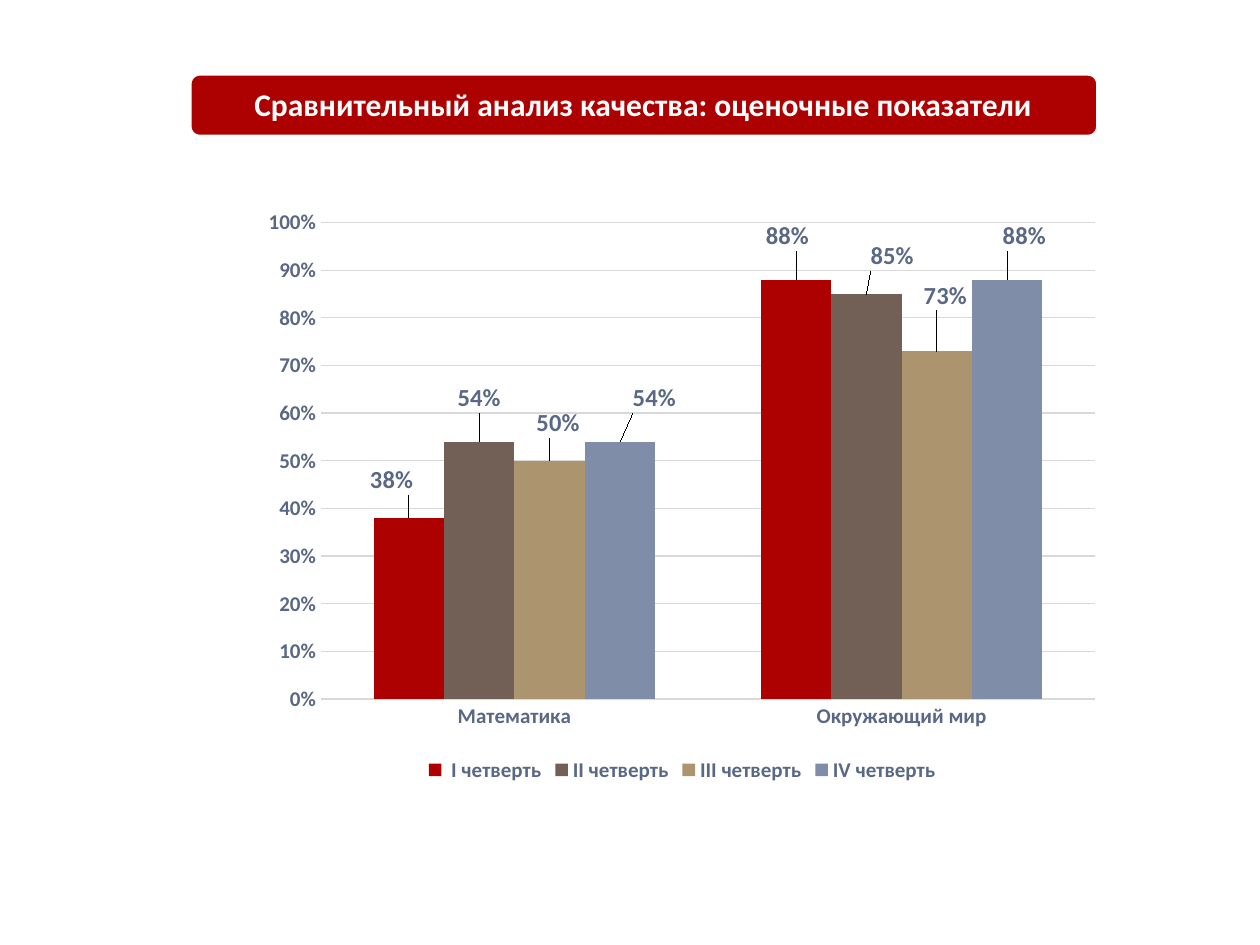
from dataclasses import dataclass

import lxml.etree
import pptx
import pptx.chart.data
import pptx.dml.color
import pptx.enum.chart
import pptx.enum.shapes
import pptx.enum.text
import pptx.oxml
import pptx.oxml.ns
import pptx.util
from pptx.util import Inches


@dataclass(frozen=True)
class Theme:
    font: str = "Calibri"
    white: str = "FFFFFF"
    red: str = "AD0101"
    text: str = "5A6885"
    grid: str = "D9D9D9"
    title_size: int = 18
    axis_size: int = 12
    label_size: int = 14


THEME = Theme()
SUBJECTS = ["Математика", "Окружающий мир"]
# Quarter, colour, values, label shifts as fractions of the chart
QUARTERS = [
    (" I четверть", THEME.red, (0.38, 0.88), ((-0.02, -0.03), (-0.01, -0.04))),
    ("II четверть", "726056", (0.54, 0.85), ((0, -0.04), (0.03, -0.03))),
    ("III четверть", "AC956E", (0.5, 0.73), ((0.01, -0.03), (0.01, -0.06))),
    ("IV четверть", "808DA9", (0.54, 0.88), ((0.04, -0.04), (0.02, -0.04))),
]


def rgb(value):
    return pptx.dml.color.RGBColor.from_string(value)


def style_font(font, size, color):
    font.name = THEME.font
    font.size = pptx.util.Pt(size)
    font.bold = True
    font.color.rgb = rgb(color)


def manual_layout(**values):
    """Make a chart layout element from its settings, in schema order."""
    layout = pptx.oxml.parse_xml(
        f"<c:layout {pptx.oxml.ns.nsdecls('c')}><c:manualLayout/></c:layout>")
    for name, value in values.items():
        tag = pptx.oxml.ns.qn(f"c:{name}")
        lxml.etree.SubElement(layout[0], tag).set("val", str(value))
    return layout


def add_title(page, text):
    title = page.shapes.title
    title.left, title.top = Inches(1.52), Inches(0.61)
    title.width, title.height = Inches(7.17), Inches(0.46)
    frame = title.text_frame
    frame.text = text
    frame.word_wrap = True
    frame.vertical_anchor = pptx.enum.text.MSO_ANCHOR.MIDDLE
    frame.margin_left = frame.margin_right = Inches(0.2)
    frame.margin_top = frame.margin_bottom = 0
    para = frame.paragraphs[0]
    para.alignment = pptx.enum.text.PP_ALIGN.CENTER
    para.line_spacing = 0.9
    style_font(para.runs[0].font, THEME.title_size, THEME.white)

    # Band behind the title
    band = page.shapes.add_shape(
        pptx.enum.shapes.MSO_SHAPE.ROUNDED_RECTANGLE,
        Inches(1.5), Inches(0.58), Inches(7.22), Inches(0.51))
    band.shadow.inherit = False
    band.fill.solid()
    band.fill.fore_color.rgb = rgb(THEME.red)
    band.line.color.rgb = rgb(THEME.white)
    band.line.width = pptx.util.Pt(3)
    title.element.addprevious(band.element)


def style_axis(axis):
    axis.major_tick_mark = axis.minor_tick_mark = pptx.enum.chart.XL_TICK_MARK.NONE
    axis.format.line.fill.background()
    style_font(axis.tick_labels.font, THEME.axis_size, THEME.text)


def style_series(series, color, shifts):
    series.format.fill.solid()
    series.format.fill.fore_color.rgb = rgb(color)
    labels = series.data_labels
    labels.show_value = True
    labels.number_format = "0%"
    labels.number_format_is_linked = False
    style_font(labels.font, THEME.label_size, THEME.text)
    for index, (shift_x, shift_y) in enumerate(shifts):
        label = series.points[index].data_label
        style_font(label.font, THEME.label_size, THEME.text)
        label.position = pptx.enum.chart.XL_LABEL_POSITION.OUTSIDE_END
        point_label = labels._element.findall(pptx.oxml.ns.qn("c:dLbl"))[index]
        point_label.insert(1, manual_layout(x=shift_x, y=shift_y))


def add_quality_chart(page):
    data = pptx.chart.data.CategoryChartData(number_format="0%")
    data.categories = SUBJECTS
    for name, _, values, _ in QUARTERS:
        data.add_series(name, values)
    chart = page.shapes.add_chart(
        pptx.enum.chart.XL_CHART_TYPE.COLUMN_CLUSTERED,
        Inches(2), Inches(1.58), Inches(6.83), Inches(4.67), data).chart
    chart.has_title = False
    chart.font.name = THEME.font
    chart.font.size = pptx.util.Pt(10)

    # Plot area and bars
    plot = chart.plots[0]
    plot.gap_width, plot.overlap = 150, 0
    plot.vary_by_categories = False
    for series, (_, color, _, shifts) in zip(plot.series, QUARTERS):
        style_series(series, color, shifts)
    area = chart._chartSpace.chart.plotArea
    for old in area.findall(pptx.oxml.ns.qn("c:layout")):
        area.remove(old)
    area.insert(0, manual_layout(layoutTarget="inner", xMode="edge", yMode="edge",
                                 x=0.08, y=0.04, w=0.9, h=0.81))

    # Axes
    style_axis(chart.category_axis)
    axis = chart.value_axis
    style_axis(axis)
    axis.minimum_scale, axis.maximum_scale, axis.major_unit = 0, 1, 0.1
    axis.tick_labels.number_format = "0%"
    axis.tick_labels.number_format_is_linked = False
    grid = axis.major_gridlines.format.line
    grid.color.rgb = rgb(THEME.grid)
    grid.width = pptx.util.Pt(0.75)

    # Legend
    chart.has_legend = True
    chart.legend.position = pptx.enum.chart.XL_LEGEND_POSITION.BOTTOM
    chart.legend.include_in_layout = False
    style_font(chart.legend.font, THEME.axis_size, THEME.text)


def main():
    deck = pptx.Presentation()
    deck.slide_width, deck.slide_height = Inches(10), Inches(7.5)
    page = deck.slides.add_slide(deck.slide_layouts.get_by_name("Title Only"))
    add_title(page, "Сравнительный анализ качества: оценочные показатели")
    add_quality_chart(page)
    deck.save("out.pptx")


if __name__ == "__main__":
    main()
